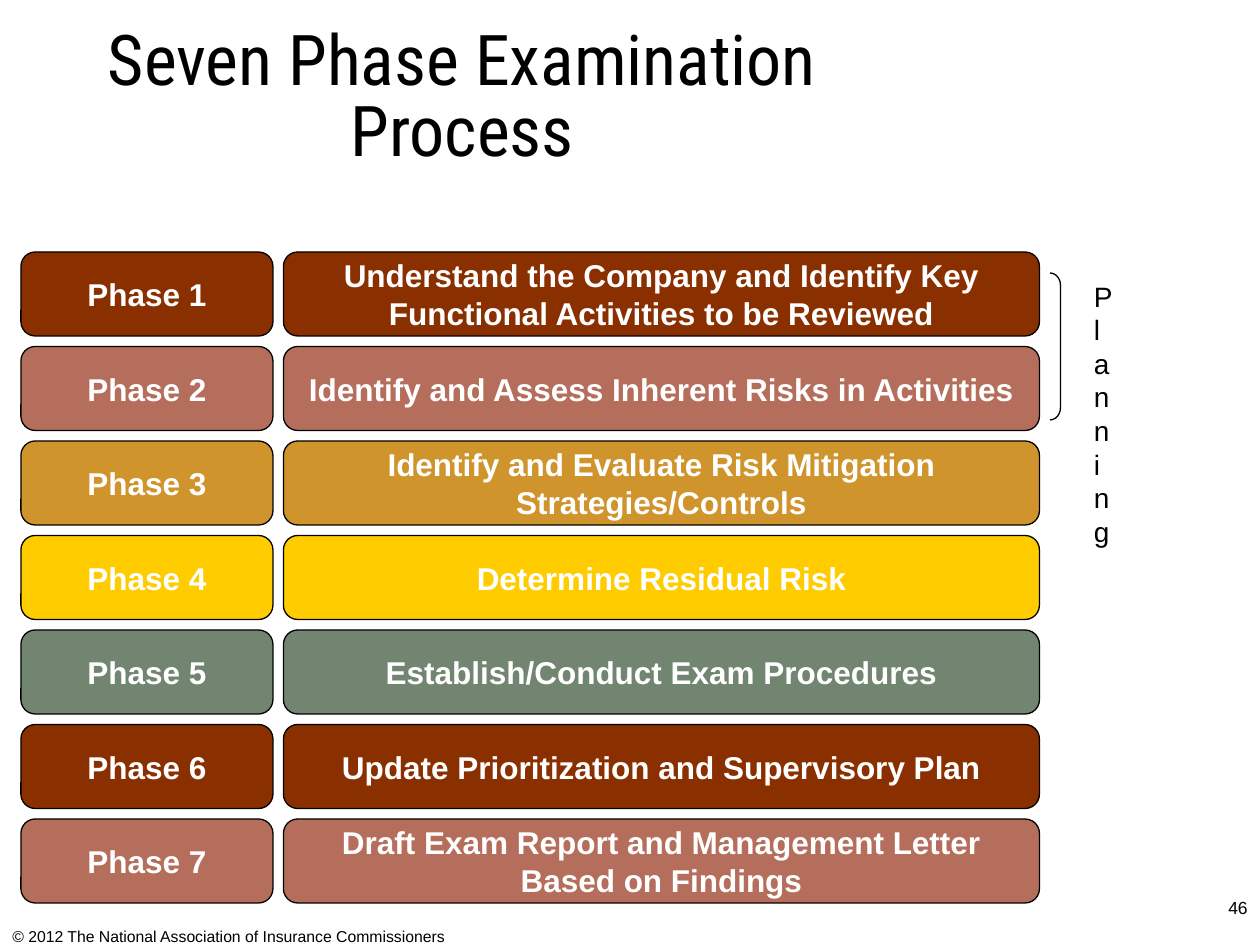
from dataclasses import dataclass

from pptx import Presentation
from pptx.dml.color import RGBColor
from pptx.enum import shapes, text
from pptx.util import Pt


@dataclass(frozen=True)
class Theme:
    heading_font: str = "Roboto Condensed"
    body_font: str = "Arial"
    ink: str = "000000"
    light: str = "FFFFFF"
    phases: tuple = ("8A3000", "B56E5B", "CF942B", "FFCC00", "718571")
    title_size: float = 40
    phase_size: float = 18
    side_size: float = 16
    number_size: float = 10
    footer_size: float = 9
    line_width: float = 0.75


THEME = Theme()
ALIGN = text.PP_ALIGN
ANCHOR = text.MSO_ANCHOR

ROW_TOP, ROW_HEIGHT, GAP = 144, 48, 6
LABEL_LEFT, LABEL_WIDTH, STEP_WIDTH = 12, 144, 432
STEP_LEFT = LABEL_LEFT + LABEL_WIDTH + GAP

STEPS = [
    ["Understand the Company and Identify Key", "Functional Activities to be Reviewed"],
    ["Identify and Assess Inherent Risks in Activities"],
    ["Identify and Evaluate Risk Mitigation", "Strategies/Controls"],
    ["Determine Residual Risk"],
    ["Establish/Conduct Exam Procedures"],
    ["Update Prioritization and Supervisory Plan"],
    ["Draft Exam Report and Management Letter", "Based on Findings"],
]


def write(frame, lines, size, color=THEME.ink, font=THEME.body_font,
          bold=False, align=ALIGN.LEFT, spacing=None):
    """Fill a text frame with one paragraph per line."""
    for index, line in enumerate(lines):
        para = frame.paragraphs[0] if index == 0 else frame.add_paragraph()
        para.alignment = align
        if spacing:
            para.line_spacing = spacing
        span = para.add_run()
        span.text = line
        span.font.name = font
        span.font.size = Pt(size)
        span.font.bold = bold
        span.font.color.rgb = RGBColor.from_string(color)


def add_text(page, left, top, width, height, line, size, anchor=ANCHOR.TOP, **style):
    box = page.shapes.add_textbox(Pt(left), Pt(top), Pt(width), Pt(height))
    box.text_frame.word_wrap = True
    box.text_frame.vertical_anchor = anchor
    write(box.text_frame, [line], size, **style)


def add_outlined(page, kind, left, top, width, height, adjustment):
    shape = page.shapes.add_shape(kind, Pt(left), Pt(top), Pt(width), Pt(height))
    shape.shadow.inherit = False
    shape.adjustments[0] = adjustment
    shape.line.color.rgb = RGBColor.from_string(THEME.ink)
    shape.line.width = Pt(THEME.line_width)
    return shape


def add_phase_box(page, left, top, width, lines, color):
    box = add_outlined(page, shapes.MSO_SHAPE.ROUNDED_RECTANGLE,
                       left, top, width, ROW_HEIGHT, 0.17)
    box.fill.solid()
    box.fill.fore_color.rgb = RGBColor.from_string(color)
    box.text_frame.word_wrap = False
    box.text_frame.vertical_anchor = ANCHOR.MIDDLE
    write(box.text_frame, lines, THEME.phase_size, THEME.light,
          bold=True, align=ALIGN.CENTER)


def add_phases(page):
    for index, lines in enumerate(STEPS):
        top = ROW_TOP + index * (ROW_HEIGHT + GAP)
        color = THEME.phases[index % len(THEME.phases)]
        add_phase_box(page, STEP_LEFT, top, STEP_WIDTH, lines, color)
        add_phase_box(page, LABEL_LEFT, top, LABEL_WIDTH, [f"Phase {index + 1}"], color)


def add_planning_bracket(page):
    """Bracket phases 1 and 2; the narrow label wraps letter by letter."""
    bracket = add_outlined(page, shapes.MSO_SHAPE.RIGHT_BRACKET, 600, 156, 6, 84, 1.17)
    bracket.fill.background()
    add_text(page, 618, 156, 24, 161, "Planning", THEME.side_size)


def main():
    deck = Presentation()
    deck.slide_width, deck.slide_height = Pt(720), Pt(540)
    page = deck.slides.add_slide(deck.slide_layouts[6])
    add_text(page, 0, 526, 402, 18,
             "© 2012 The National Association of Insurance Commissioners",
             THEME.footer_size)
    add_text(page, 0, 12, 528, 90, "Seven Phase Examination Process",
             THEME.title_size, anchor=ANCHOR.MIDDLE, font=THEME.heading_font,
             align=ALIGN.CENTER, spacing=0.85)
    add_phases(page)
    add_planning_bracket(page)
    add_text(page, 552, 509, 168, 19.5, "46", THEME.number_size, align=ALIGN.RIGHT)
    deck.save("out.pptx")


if __name__ == "__main__":
    main()
